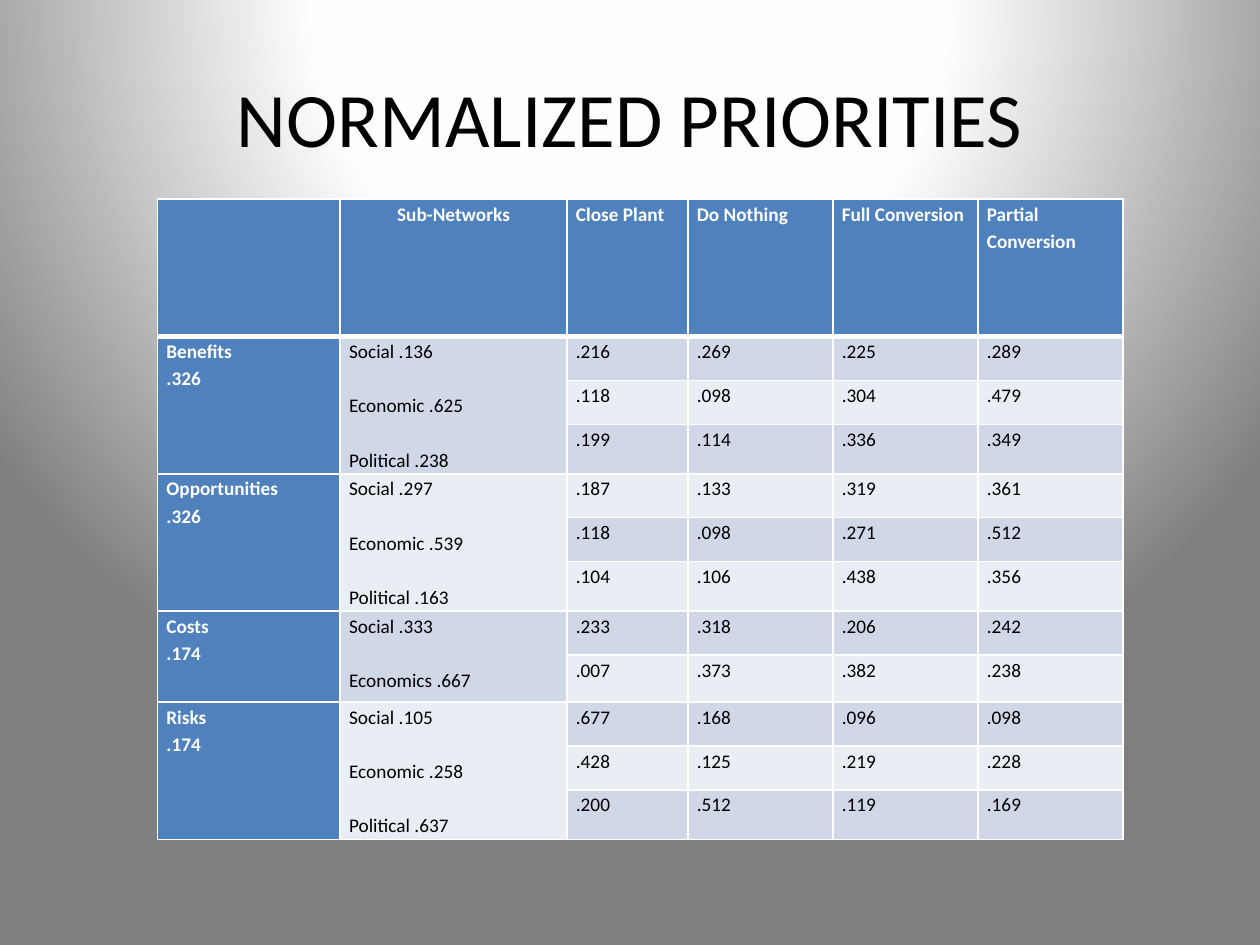
"""Build the normalized priorities slide."""
from pptx import Presentation
from pptx.dml.color import RGBColor
from pptx.enum import text
from pptx.oxml import parse_xml
from pptx.util import Pt

TITLE = "NORMALIZED PRIORITIES"
HEADS = ["", "Sub-Networks", "Close Plant", "Do Nothing", "Full Conversion",
         "Partial Conversion"]
GROUPS = [
    ("Benefits", ".326", 78.5, [
        ("Social .136", ".216", ".269", ".225", ".289"),
        ("Economic .625", ".118", ".098", ".304", ".479"),
        ("Political .238", ".199", ".114", ".336", ".349")]),
    ("Opportunities", ".326", 78.5, [
        ("Social .297", ".187", ".133", ".319", ".361"),
        ("Economic .539", ".118", ".098", ".271", ".512"),
        ("Political .163", ".104", ".106", ".438", ".356")]),
    ("Costs", ".174", 52, [
        ("Social .333", ".233", ".318", ".206", ".242"),
        ("Economics .667", ".007", ".373", ".382", ".238")]),
    ("Risks", ".174", 78.5, [
        ("Social .105", ".677", ".168", ".096", ".098"),
        ("Economic .258", ".428", ".125", ".219", ".228"),
        ("Political .637", ".200", ".512", ".119", ".169")]),
]
WIDTHS = [104.4, 129.6, 69.1, 82.9, 82.9, 82.9]
HEAD_H, ROW_H = 78.5, 25.1
BLUE, WHITE, BLACK = "4F81BD", "FFFFFF", "000000"
BANDS = ["D0D8E8", "E9EDF4"]
STOPS = [(0, "FFFFFF"), (40, "FEFEFE"), (100, "7F7F7F")]
NS = ('xmlns:a="http://schemas.openxmlformats.org/drawingml/2006/main" '
      'xmlns:p="http://schemas.openxmlformats.org/presentationml/2006/main"')


def color(code):
    return RGBColor.from_string(code)


def style(para, size, code, bold=False):
    for run in para.runs:
        font = run.font
        font.name, font.size, font.bold = "Calibri", Pt(size), bold
        font.color.rgb = color(code)


def backdrop(slide):
    stops = "".join(f'<a:gs pos="{pos * 1000}"><a:srgbClr val="{code}"/></a:gs>'
                    for pos, code in STOPS)
    slide.element.cSld.insert(0, parse_xml(
        f'<p:bg {NS}><p:bgPr><a:gradFill rotWithShape="1"><a:gsLst>{stops}</a:gsLst>'
        '<a:path path="circle"><a:fillToRect l="50000" t="-80000" r="50000" '
        'b="180000"/></a:path></a:gradFill><a:effectLst/></p:bgPr></p:bg>'))


def border(cell, top, low):
    props = cell._tc.get_or_add_tcPr()
    for spot, (side, wide) in enumerate(zip("LRTB", (1, 1, top, low))):
        props.insert(spot, parse_xml(
            f'<a:ln{side} {NS} w="{Pt(wide)}"><a:solidFill>'
            f'<a:srgbClr val="{WHITE}"/></a:solidFill></a:ln{side}>'))


def write(cell, words, fill, code=BLACK, bold=False, gap=0):
    cell.fill.solid()
    cell.fill.fore_color.rgb = color(fill)
    cell.margin_left = cell.margin_right = Pt(5.1)
    cell.margin_top = cell.margin_bottom = Pt(0)
    cell.text_frame.text = words
    for num, para in enumerate(cell.text_frame.paragraphs):
        para.line_spacing = 1.15
        para.space_before = Pt(gap if num else 0)
        style(para, 11, code, bold)


def add_title(slide):
    box = slide.shapes.add_textbox(Pt(36), Pt(21.6), Pt(648), Pt(90))
    frame = box.text_frame
    frame.word_wrap = True
    frame.vertical_anchor = text.MSO_ANCHOR.MIDDLE
    frame.text = TITLE
    para = frame.paragraphs[0]
    para.alignment = text.PP_ALIGN.CENTER
    style(para, 44, BLACK)


def add_grid(slide):
    highs = [HEAD_H]
    for _, _, high, rows in GROUPS:
        rest = len(rows) - 1
        highs += [ROW_H] * rest + [high - ROW_H * rest]
    grid = slide.shapes.add_table(len(highs), len(WIDTHS), Pt(90), Pt(113.8),
                                  Pt(sum(WIDTHS)), Pt(sum(highs))).table
    for col, wide in zip(grid.columns, WIDTHS):
        col.width = Pt(wide)
    for row, high in zip(grid.rows, highs):
        row.height = Pt(high)

    for col, head in enumerate(HEADS):
        write(grid.cell(0, col), head, BLUE, WHITE, True)
    grid.cell(0, 1).text_frame.paragraphs[0].alignment = text.PP_ALIGN.CENTER

    top = 1
    for num, (name, weight, _, rows) in enumerate(GROUPS):
        last = top + len(rows) - 1
        for col in (0, 1):
            grid.cell(top, col).merge(grid.cell(last, col))
        write(grid.cell(top, 0), f"{name}\n{weight}", BLUE, WHITE, True)
        subs = "\n".join(row[0] for row in rows)
        write(grid.cell(top, 1), subs, BANDS[num % 2], gap=15.5)
        for line, row in enumerate(rows, top):
            for col, value in enumerate(row[1:], 2):
                write(grid.cell(line, col), value, BANDS[(line - 1) % 2])
        top = last + 1

    for line in range(len(highs)):
        for col in range(len(WIDTHS)):
            border(grid.cell(line, col), 3 if line == 1 else 1, 1 if line else 3)


def main():
    deck = Presentation()
    deck.slide_width, deck.slide_height = Pt(720), Pt(540)
    slide = deck.slides.add_slide(deck.slide_layouts[6])
    backdrop(slide)
    add_title(slide)
    add_grid(slide)
    deck.save("out.pptx")


if __name__ == "__main__":
    main()
